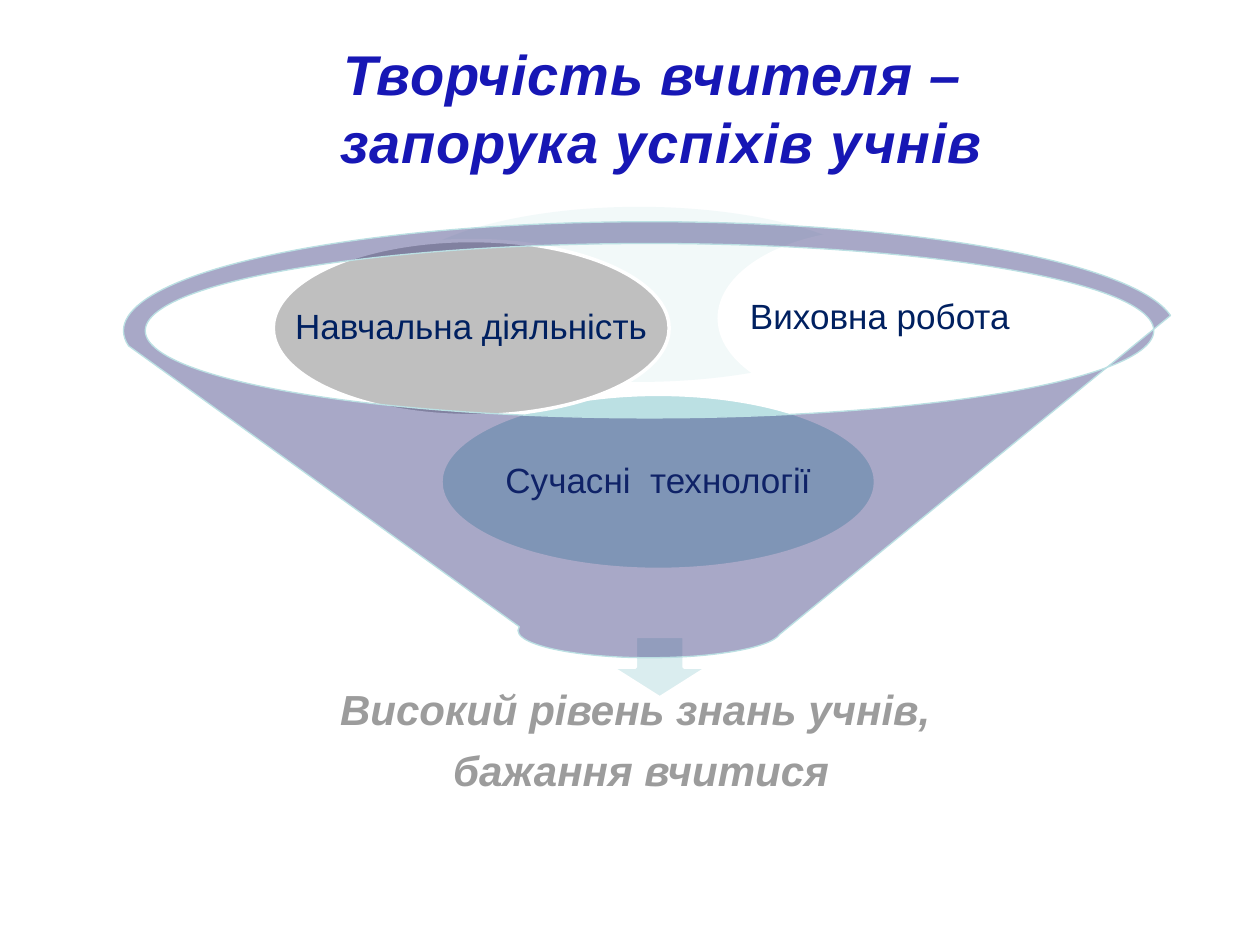
"""Build a slide with a funnel that turns a teacher's work into results."""
from dataclasses import dataclass
from typing import Optional

from lxml import etree
from pptx import Presentation
from pptx.dml.color import RGBColor
from pptx.enum.shapes import MSO_SHAPE
from pptx.enum.text import MSO_ANCHOR, PP_ALIGN
from pptx.oxml.ns import qn
from pptx.util import Cm, Pt

ELLIPSE = MSO_SHAPE.OVAL
ARROW = MSO_SHAPE.DOWN_ARROW
FUNNEL = MSO_SHAPE.FUNNEL
MIDDLE = MSO_ANCHOR.MIDDLE
CENTER = PP_ALIGN.CENTER

WHITE = RGBColor(0xFF, 0xFF, 0xFF)
BLUE = RGBColor(0x17, 0x17, 0xB5)
NAVY = RGBColor(0x00, 0x20, 0x60)
INDIGO = RGBColor(0x26, 0x26, 0x73)
GREY = RGBColor(0xBF, 0xBF, 0xBF)
TEXT_GREY = RGBColor(0x9C, 0x9C, 0x9C)
AQUA = RGBColor(0xBB, 0xE0, 0xE3)
PALE_AQUA = RGBColor(0xDA, 0xED, 0xEF)
MIST = RGBColor(0xE0, 0xF0, 0xF2)
FONT = "Arial"


@dataclass(frozen=True)
class Figure:
    """A preset shape, placed in centimetres."""
    kind: MSO_SHAPE
    left: float
    top: float
    width: float
    height: float
    fill: RGBColor
    line: Optional[RGBColor] = WHITE
    line_width: float = 2
    opacity: int = 100
    label: str = ""


FIGURES = [
    Figure(ELLIPSE, 7.82, 4.17, 10.13, 3.53, MIST, line=None, opacity=40),
    Figure(ARROW, 12.32, 12.83, 1.96, 1.24, PALE_AQUA),
    Figure(ELLIPSE, 8.89, 7.95, 8.76, 3.53, AQUA, label="Сучасні  технології"),
    Figure(ELLIPSE, 5.51, 4.85, 7.98, 3.53, GREY, label="Навчальна діяльність"),
    Figure(ELLIPSE, 14.5, 4.65, 6.48, 3.53, WHITE, label="Виховна робота"),
    Figure(FUNNEL, 2.49, 4.47, 21.21, 8.79, INDIGO, line=AQUA,
           line_width=0.75, opacity=40),
]


def write_text(frame, text: str, *, size: float, color: RGBColor,
               emphasis: bool = False, wrap: bool = True, margin: float = 0.25,
               line_spacing: float = 1.0, space_after: float = 0,
               tracking: int = 0) -> None:
    """Fill a text frame with centred paragraphs, one for each line."""
    frame.text = text
    frame.word_wrap = wrap
    frame.vertical_anchor = MIDDLE
    frame.margin_left = frame.margin_right = Cm(margin)
    frame.margin_top = frame.margin_bottom = Cm(margin)
    for para in frame.paragraphs:
        para.alignment = CENTER
        para.line_spacing = line_spacing
        para.space_after = Pt(space_after)
        for span in para.runs:
            font = span.font
            font.name, font.size = FONT, Pt(size)
            font.bold = font.italic = emphasis
            font.color.rgb = color
            if tracking:
                font._element.set("spc", str(tracking))


def draw_figure(page, figure: Figure) -> None:
    """Draw one figure with its label."""
    shape = page.shapes.add_shape(figure.kind, Cm(figure.left), Cm(figure.top),
                                  Cm(figure.width), Cm(figure.height))
    shape.shadow.inherit = False
    shape.fill.solid()
    shape.fill.fore_color.rgb = figure.fill
    if figure.opacity < 100:
        color = shape._element.spPr.find(qn("a:solidFill"))[0]
        etree.SubElement(color, qn("a:alpha")).set("val", str(figure.opacity * 1000))
    if figure.line is None:
        shape.line.fill.background()
    else:
        shape.line.color.rgb = figure.line
        shape.line.width = Pt(figure.line_width)
    if figure.label:
        write_text(shape.text_frame, figure.label, size=20, color=NAVY,
                   wrap=False, margin=0.08, line_spacing=0.9)


def draw_title(page) -> None:
    """Place and format the title."""
    title = page.shapes.title
    title.left, title.top = Cm(1.27), Cm(0.99)
    title.width, title.height = Cm(24.13), Cm(2.34)
    write_text(title.text_frame, "Творчість вчителя – \vзапорука успіхів учнів",
               size=32, color=BLUE, emphasis=True, margin=0.13, tracking=50)


def draw_result(page) -> None:
    """Write the outcome below the funnel."""
    box = page.shapes.add_textbox(Cm(3.91), Cm(12.47), Cm(18.03), Cm(5))
    write_text(box.text_frame, "Високий рівень знань учнів, \nбажання вчитися",
               size=24, color=TEXT_GREY, emphasis=True, margin=0.48,
               line_spacing=0.9, space_after=9)


def main() -> None:
    """Build and save the deck."""
    deck = Presentation()
    deck.slide_width, deck.slide_height = Cm(25.4), Cm(19.05)
    page = deck.slides.add_slide(deck.slide_layouts[5])
    draw_title(page)
    for figure in FIGURES:
        draw_figure(page, figure)
        if figure.kind == ARROW:
            draw_result(page)
    deck.save("out.pptx")


if __name__ == "__main__":
    main()
